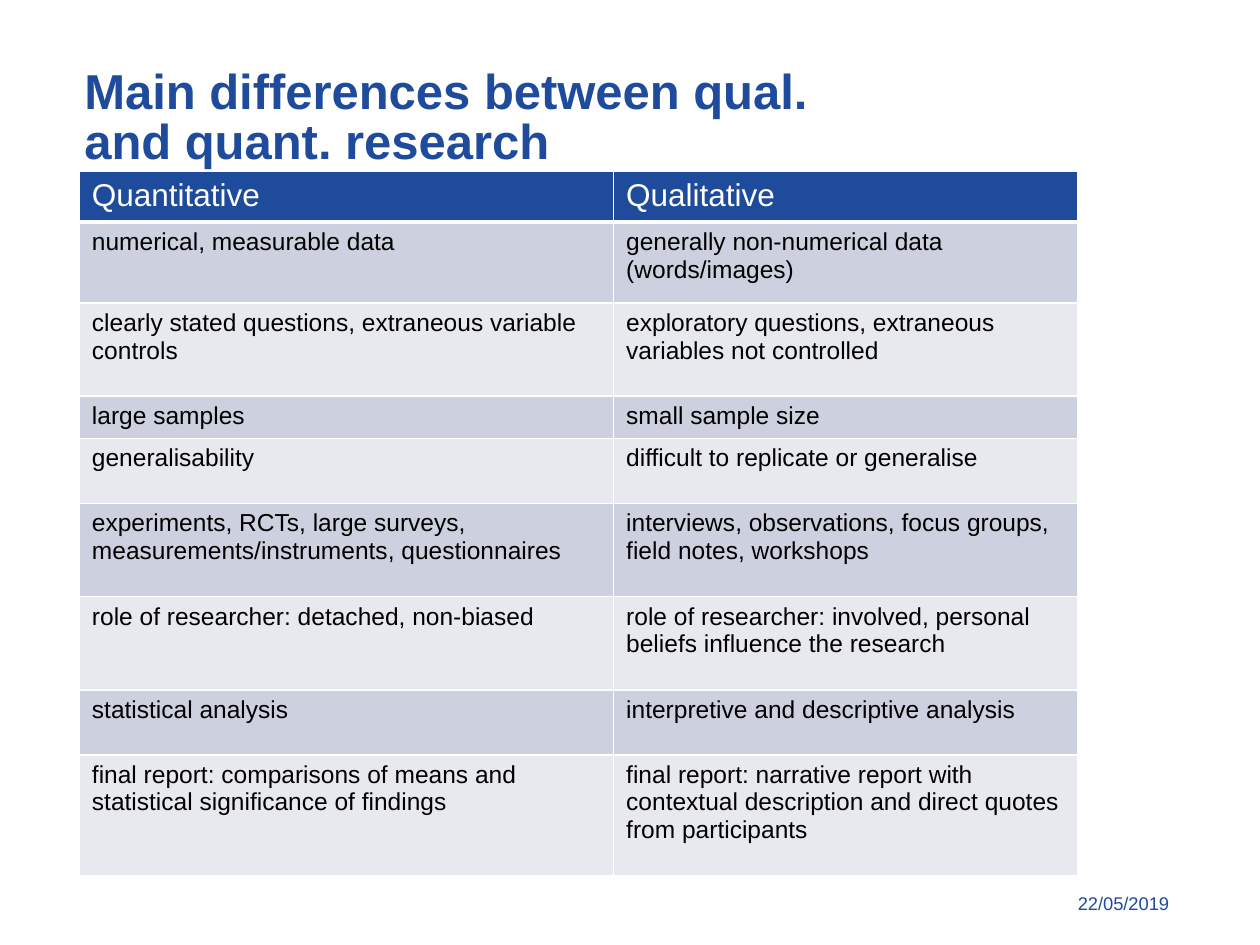
from dataclasses import dataclass
from typing import NamedTuple

from lxml.etree import SubElement
from pptx import Presentation
from pptx.dml.color import RGBColor
from pptx.enum.text import MSO_ANCHOR as Anchor, MSO_AUTO_SIZE as AutoSize, PP_ALIGN as Align
from pptx.oxml.ns import qn
from pptx.util import Cm, Pt


@dataclass(frozen=True)
class Theme:
    font: str = "Arial"
    blue: str = "1E4B9B"
    white: str = "FFFFFF"
    black: str = "000000"
    bands: tuple = ("CDD0DE", "E8E9EF")
    title_size: float = 28
    header_size: float = 18
    body_size: float = 14
    date_size: float = 10.5
    border: float = 1
    header_rule: float = 3


class Comparison(NamedTuple):
    quantitative: str
    qualitative: str
    height: float  # centimetres


THEME = Theme()
TABLE_LEFT, TABLE_TOP = 1.6, 3.46
COLUMN_WIDTHS = (10.77, 9.35)

COMPARISONS = [
    Comparison("Quantitative", "Qualitative", 0.93),
    Comparison("numerical, measurable data",
               "generally non-numerical data (words/images)", 1.63),
    Comparison("clearly stated questions, extraneous variable controls",
               "exploratory questions, extraneous variables not controlled", 1.88),
    Comparison("large samples", "small sample size", 0.8),
    Comparison("generalisability", "difficult to replicate or generalise", 1.31),
    Comparison("experiments, RCTs, large surveys, measurements/instruments, questionnaires",
               "interviews, observations, focus groups, field notes, workshops", 1.88),
    Comparison("role of researcher: detached, non-biased",
               "role of researcher: involved, personal beliefs influence the research", 1.88),
    Comparison("statistical analysis", "interpretive and descriptive analysis", 1.31),
    Comparison("final report: comparisons of means and statistical significance of findings",
               "final report: narrative report with contextual description "
               "and direct quotes from participants", 2.44),
]


def write_text(frame, text: str, *, size: float, color: str,
               bold: bool = False, align: Align = Align.LEFT):
    """Fill a text frame with one formatted paragraph and return it."""
    paragraph = frame.paragraphs[0]
    paragraph.alignment = align
    run = paragraph.add_run()
    run.text = text
    run.font.name = THEME.font
    run.font.size = Pt(size)
    run.font.bold = bold
    run.font.color.rgb = RGBColor.from_string(color)
    return paragraph


def set_borders(cell, bottom_width: float) -> None:
    properties = cell._tc.get_or_add_tcPr()
    for side in "LRTB":
        width = bottom_width if side == "B" else THEME.border
        line = SubElement(properties, qn(f"a:ln{side}"), w=str(Pt(width)))
        fill = SubElement(line, qn("a:solidFill"))
        SubElement(fill, qn("a:srgbClr"), val=THEME.white)


def add_title(slide, text: str) -> None:
    title = slide.shapes.title
    title.left, title.top, title.width, title.height = Cm(1.6), Cm(1.3), Cm(16.56), Cm(2.44)
    frame = title.text_frame
    frame.word_wrap = True
    frame.auto_size = AutoSize.NONE
    frame.vertical_anchor = Anchor.TOP
    frame.margin_left = frame.margin_top = frame.margin_bottom = Cm(0.1)
    frame.margin_right = Cm(0.05)
    paragraph = write_text(frame, text, size=THEME.title_size, color=THEME.blue, bold=True)
    paragraph.line_spacing = 0.85
    paragraph.space_before = Pt(10)


def add_comparison_table(slide, comparisons: list[Comparison]) -> None:
    table = slide.shapes.add_table(
        len(comparisons), len(COLUMN_WIDTHS), Cm(TABLE_LEFT), Cm(TABLE_TOP),
        Cm(sum(COLUMN_WIDTHS)), Cm(sum(row.height for row in comparisons))).table
    for column, width in zip(table.columns, COLUMN_WIDTHS):
        column.width = Cm(width)
    for index, comparison in enumerate(comparisons):
        table.rows[index].height = Cm(comparison.height)
        # The header is blue; the rows below alternate between two bands
        if index == 0:
            fill, color, size, rule = THEME.blue, THEME.white, THEME.header_size, THEME.header_rule
        else:
            fill, color = THEME.bands[(index - 1) % 2], THEME.black
            size, rule = THEME.body_size, THEME.border
        for cell, text in zip(table.rows[index].cells, comparison[:2]):
            set_borders(cell, rule)
            cell.fill.solid()
            cell.fill.fore_color.rgb = RGBColor.from_string(fill)
            write_text(cell.text_frame, text, size=size, color=color)


def add_date(slide, text: str) -> None:
    box = slide.shapes.add_textbox(Cm(21.08), Cm(17.86), Cm(2.74), Cm(0.71))
    box.text_frame.word_wrap = True
    write_text(box.text_frame, text, size=THEME.date_size, color=THEME.blue, align=Align.RIGHT)


def main() -> None:
    presentation = Presentation()
    presentation.slide_width, presentation.slide_height = Cm(25.4), Cm(19.05)
    title_only = presentation.slide_layouts.get_by_name("Title Only")
    slide = presentation.slides.add_slide(title_only)

    # Date, title, then the table on top
    add_date(slide, "22/05/2019")
    add_title(slide, "Main differences between qual. and quant. research")
    add_comparison_table(slide, COMPARISONS)
    presentation.save("out.pptx")


if __name__ == "__main__":
    main()
